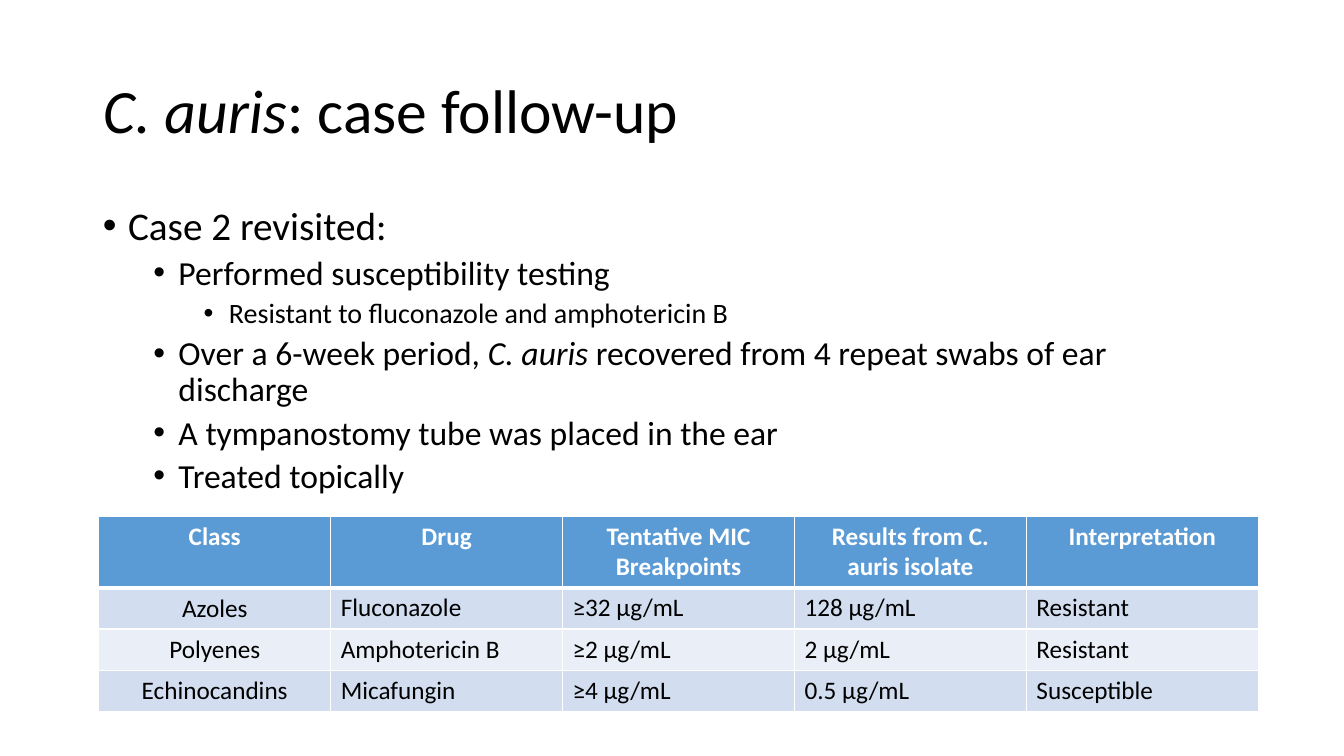
"""Build the C. auris case follow-up slide."""
from dataclasses import dataclass

from lxml.etree import SubElement
from pptx import Presentation
from pptx.dml.color import RGBColor
from pptx.enum.text import MSO_ANCHOR, MSO_AUTO_SIZE, PP_ALIGN
from pptx.oxml.ns import qn
from pptx.util import Inches, Pt

FONT = "Calibri"
COLORS = {
    "text": "000000",
    "white": "FFFFFF",
    "header": "5B9BD5",
    "odd_row": "D2DEEF",
    "even_row": "EAEFF7",
}
LEVEL_SIZES = (28, 24, 20)


@dataclass(frozen=True)
class Span:
    text: str
    italic: bool = False


@dataclass(frozen=True)
class Point:
    level: int
    spans: tuple[Span, ...]


TITLE = (Span("C. auris", italic=True), Span(": case follow-up"))
POINTS = (
    Point(0, (Span("Case 2 revisited:"),)),
    Point(1, (Span("Performed susceptibility testing"),)),
    Point(2, (Span("Resistant to fluconazole and amphotericin B"),)),
    Point(1, (
        Span("Over a 6-week period, "),
        Span("C. auris ", italic=True),
        Span("recovered from 4 repeat swabs of ear discharge"),
    )),
    Point(1, (Span("A tympanostomy tube was placed in the ear"),)),
    Point(1, (Span("Treated topically"),)),
)
SUSCEPTIBILITY = (
    ("Class", "Drug", "Tentative MIC Breakpoints", "Results from C. auris isolate", "Interpretation"),
    ("Azoles", "Fluconazole", "≥32 µg/mL", "128 µg/mL", "Resistant"),
    ("Polyenes", "Amphotericin B", "≥2 µg/mL", "2 µg/mL", "Resistant"),
    ("Echinocandins", "Micafungin", "≥4 µg/mL", "0.5 µg/mL", "Susceptible"),
)


def add_span(paragraph, span: Span, size: float, color: str = "text", bold: bool = False) -> None:
    """Append one formatted run to a paragraph."""
    run = paragraph.add_run()
    run.text = span.text
    run.font.name = FONT
    run.font.size = Pt(size)
    run.font.bold = bold
    run.font.italic = span.italic
    run.font.color.rgb = RGBColor.from_string(COLORS[color])


def place(placeholder, left: float, top: float, width: float, height: float) -> None:
    """Move a placeholder and fix its text size."""
    placeholder.left, placeholder.top = Inches(left), Inches(top)
    placeholder.width, placeholder.height = Inches(width), Inches(height)
    placeholder.text_frame.word_wrap = True
    placeholder.text_frame.auto_size = MSO_AUTO_SIZE.NONE


def fill_title(title) -> None:
    """Write the slide title."""
    place(title, 0.92, 0.4, 11.5, 1.45)
    title.text_frame.vertical_anchor = MSO_ANCHOR.MIDDLE
    heading = title.text_frame.paragraphs[0]
    heading.alignment = PP_ALIGN.LEFT
    heading.line_spacing = 0.9
    for span in TITLE:
        add_span(heading, span, 44)


def fill_points(body) -> None:
    """Write the bulleted case history."""
    place(body, 0.92, 2, 11.5, 4.76)
    body.text_frame.vertical_anchor = MSO_ANCHOR.TOP
    for index, point in enumerate(POINTS):
        paragraph = body.text_frame.add_paragraph() if index else body.text_frame.paragraphs[0]
        paragraph.level = point.level
        properties = paragraph._p.get_or_add_pPr()
        properties.set("marL", str(Inches(0.25 + 0.5 * point.level)))
        properties.set("indent", str(Inches(-0.25)))
        SubElement(properties, qn("a:buFont")).set("typeface", "Arial")
        SubElement(properties, qn("a:buChar")).set("char", "•")
        paragraph.line_spacing = 0.9
        paragraph.space_before = Pt(5 if index else 0)
        for span in point.spans:
            add_span(paragraph, span, LEVEL_SIZES[point.level])


def add_borders(cell, bottom: float) -> None:
    """Outline a cell in white with a chosen bottom width."""
    properties = cell._tc.get_or_add_tcPr()
    for side, width in (("L", 1), ("R", 1), ("T", 1), ("B", bottom)):
        line = SubElement(properties, qn(f"a:ln{side}"), w=str(Pt(width)))
        SubElement(SubElement(line, qn("a:solidFill")), qn("a:srgbClr"), val=COLORS["white"])


def add_susceptibility(slide) -> None:
    """Draw the drug susceptibility table."""
    row_count, column_count = len(SUSCEPTIBILITY), len(SUSCEPTIBILITY[0])
    table = slide.shapes.add_table(
        row_count, column_count, Inches(0.98), Inches(5.12), Inches(11.5), Inches(1.92)
    ).table
    for row_index, values in enumerate(SUSCEPTIBILITY):
        is_header = row_index == 0
        table.rows[row_index].height = Inches(0.7 if is_header else 0.41)
        shade = "header" if is_header else "odd_row" if row_index % 2 else "even_row"
        for column_index, value in enumerate(values):
            cell = table.cell(row_index, column_index)
            add_borders(cell, 3 if is_header else 1)
            cell.fill.solid()
            cell.fill.fore_color.rgb = RGBColor.from_string(COLORS[shade])
            is_class = column_index == 0 and not is_header
            cell.vertical_anchor = MSO_ANCHOR.MIDDLE if is_class else MSO_ANCHOR.TOP
            paragraph = cell.text_frame.paragraphs[0]
            paragraph.alignment = PP_ALIGN.CENTER if is_header or is_class else PP_ALIGN.LEFT
            add_span(paragraph, Span(value), 18, "white" if is_header else "text", is_header)


def main() -> None:
    """Assemble and save the slide."""
    presentation = Presentation()
    presentation.slide_width, presentation.slide_height = Inches(13.33), Inches(7.5)
    slide = presentation.slides.add_slide(presentation.slide_layouts[1])
    fill_title(slide.shapes.title)
    fill_points(slide.placeholders[1])
    add_susceptibility(slide)
    presentation.save("out.pptx")


if __name__ == "__main__":
    main()
